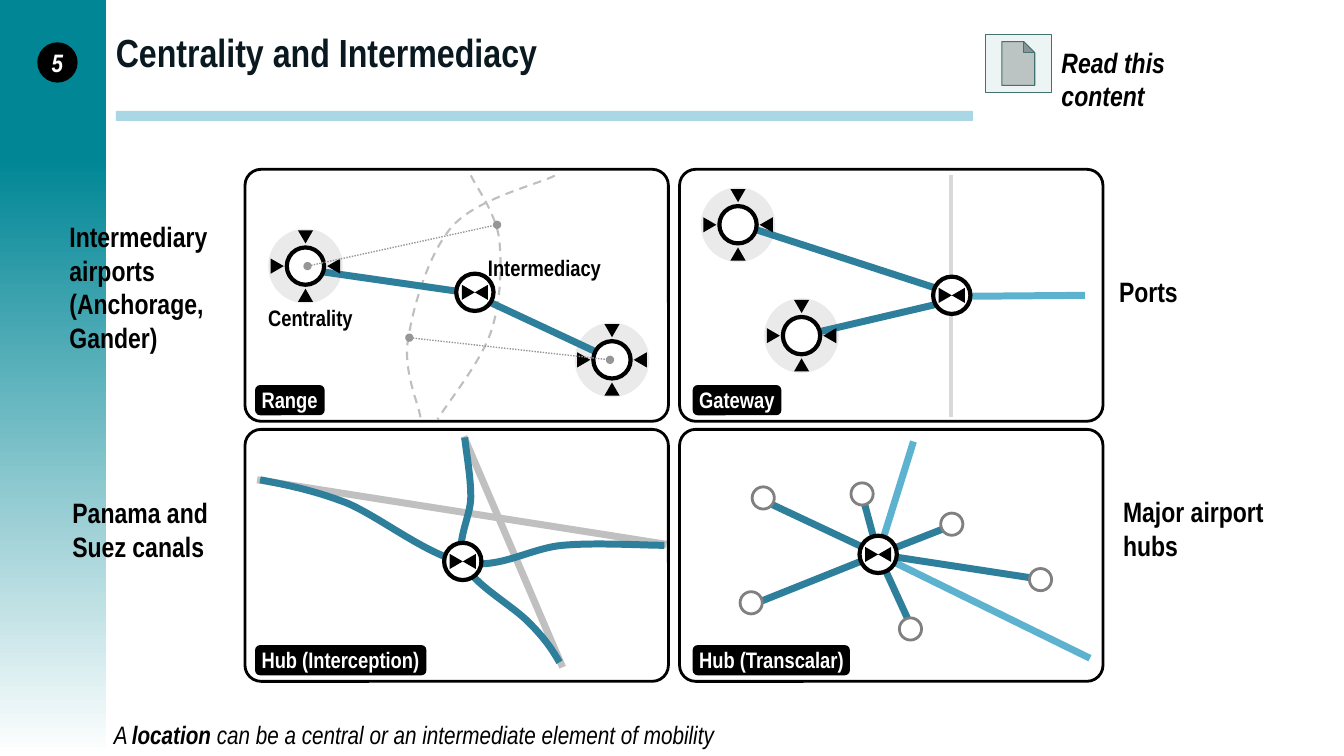
from lxml import etree
from pptx import Presentation
from pptx import util as u
from pptx.dml import color
from pptx.enum import dml, shapes, text
from pptx.oxml import ns

KIND = shapes.MSO_SHAPE
DASH = dml.MSO_LINE
FONT = "Arial Narrow"
BLACK, WHITE = "000000", "FFFFFF"
DEEP, SKY, PALE = "2D7F9B", "5DB3CF", "C0C0C0"
NONE = (0, 0, 0, 0)
WIDE = (0.1, 0.05, 0.1, 0.05)


def size(inch):
    return u.Cm(inch * 2.54)


def tint(code):
    return color.RGBColor.from_string(code)


def stroke(line, code, width, dash=None):
    line.color.rgb = tint(code)
    line.width = u.Pt(width)
    if dash:
        line.dash_style = dash


def shape(slide, kind, box, fill=None, edge=None, turn=0, round=None):
    item = slide.shapes.add_shape(kind, *map(size, box))
    item.shadow.inherit = False
    item.rotation = turn
    if round is not None:
        item.adjustments[0] = round
    if fill:
        item.fill.solid()
        item.fill.fore_color.rgb = tint(fill)
    else:
        item.fill.background()
    if edge:
        stroke(item.line, *edge)
    else:
        item.line.fill.background()
    return item


def write(item, runs, points, code=BLACK, pad=WIDE, wrap=False, middle=False, center=False):
    frame = item.text_frame
    frame.word_wrap = wrap
    frame.margin_left, frame.margin_top, frame.margin_right, frame.margin_bottom = map(size, pad)
    frame.vertical_anchor = text.MSO_ANCHOR.MIDDLE if middle else text.MSO_ANCHOR.TOP
    para = frame.paragraphs[0]
    para.alignment = text.PP_ALIGN.CENTER if center else text.PP_ALIGN.LEFT
    for words, bold, slant in runs:
        run = para.add_run()
        run.text = words
        font = run.font
        font.name, font.size = FONT, u.Pt(points)
        font.bold, font.italic = bold, slant
        font.color.rgb = tint(code)


def label(slide, box, words, points=20, slant=False, **style):
    item = slide.shapes.add_textbox(*map(size, box))
    write(item, [(words, True, slant)], points, **style)


def disc(slide, mid, wide, fill, edge=None):
    x, y = mid
    return shape(slide, KIND.OVAL, (x - wide / 2, y - wide / 2, wide, wide), fill, edge)


def ring(slide, mid):
    disc(slide, mid, 0.37, WHITE, (BLACK, 3))


def wedge(slide, x, y, turn):
    shape(slide, KIND.ISOSCELES_TRIANGLE, (x - 0.075, y - 0.065, 0.15, 0.13), BLACK, turn=turn, round=0.5)


def halo(slide, mid):
    disc(slide, mid, 0.74, "EAEAEA")


def center(slide, mid):
    ring(slide, mid)
    x, y = mid
    for dx, dy, turn in ((0, 0.29, 0), (0, -0.29, 180), (-0.28, 0, 90), (0.28, 0, 270)):
        wedge(slide, x + dx, y + dy, turn)


def hub(slide, mid):
    ring(slide, mid)
    x, y = mid
    wedge(slide, x - 0.065, y, 90)
    wedge(slide, x + 0.065, y, 270)


def link(slide, start, end, code=DEEP, width=5, dash=None, dots=False):
    item = slide.shapes.add_connector(shapes.MSO_CONNECTOR.STRAIGHT, *map(size, start + end))
    stroke(item.line, code, width, dash)
    if dots:
        for tip in ("a:headEnd", "a:tailEnd"):
            etree.SubElement(item.line._get_or_add_ln(), ns.qn(tip), type="oval")
    etree.SubElement(item._element.spPr, ns.qn("a:effectLst"))


def curve(slide, spots, code=DEEP, width=5, dash=None):
    pen = slide.shapes.build_freeform(*map(size, spots[0]))
    pen.add_line_segments([tuple(map(size, spot)) for spot in spots[1:]], close=False)
    item = pen.convert_to_shape()
    item.shadow.inherit = False
    item.fill.background()
    stroke(item.line, code, width, dash)
    track = item._element.find(".//" + ns.qn("a:path"))
    legs = track.findall(ns.qn("a:lnTo"))
    for first in range(0, len(legs), 3):
        bend = etree.SubElement(track, ns.qn("a:cubicBezTo"))
        for leg in legs[first:first + 3]:
            bend.append(leg[0])
            track.remove(leg)


def panel(slide, col, row, words, left, wide):
    top = 1.68 + 2.58 * row
    shape(slide, KIND.ROUNDED_RECTANGLE, (2.43 + 4.31 * col, top, 4.2, 2.5), edge=(BLACK, 2), round=0.064)
    tag = shape(slide, KIND.ROUNDED_RECTANGLE, (left, top + 2.14, wide, 0.3), BLACK)
    write(tag, [(words, True, False)], 16, WHITE, (0.05, 0, 0.05, 0))


def header(slide):
    shape(slide, KIND.RECTANGLE, (-0.02, -0.01, 1.07, 1.58), "008695")
    fade = shape(slide, KIND.RECTANGLE, (-0.02, 1.57, 1.07, 5.93))
    fade.fill.gradient()
    fade.fill.gradient_angle = 270
    for stop, code, place in zip(fade.fill.gradient_stops, ("008695", WHITE), (0, 1)):
        stop.color.rgb = tint(code)
        stop.position = place
    shape(slide, KIND.RECTANGLE, (1.15, 1.1, 8.5, 0.1), "AAD7E6")
    label(slide, (1.05, 0.01, 11.98, 1), "Centrality and Intermediacy", 28, code="09191F", wrap=True, middle=True)
    shape(slide, KIND.ACTION_BUTTON_DOCUMENT, (9.77, 0.34, 0.66, 0.58), "ECF4F4", ("427272", 0.75))
    label(slide, (10.43, 0.4, 1.86, 0.44), "Read this content", slant=True, wrap=True)
    badge = disc(slide, (0.57, 0.62), 0.4, BLACK)
    write(badge, [("5", True, True)], 18, WHITE, NONE, middle=True, center=True)


def reach(slide):
    west, east = (3.03, 2.64), (6.07, 3.57)
    halo(slide, west)
    halo(slide, east)
    curve(slide, [(4.67, 1.74), (4.72, 1.85), (4.91, 2.1), (4.95, 2.36), (4.98, 2.62), (4.97, 2.99),
                  (4.87, 3.29), (4.77, 3.59), (4.45, 3.98), (4.34, 4.16)], "BFBFBF", 1.5, DASH.DASH)
    curve(slide, [(4.17, 4.14), (4.15, 4), (3.99, 3.67), (4.05, 3.35), (4.1, 3.04), (4.25, 2.51),
                  (4.49, 2.24), (4.74, 1.97), (5.3, 1.84), (5.51, 1.74)], "BFBFBF", 1.5, DASH.DASH)
    link(slide, (5.91, 3.49), (4.82, 2.98))
    link(slide, (4.54, 2.89), (3.15, 2.69))
    hub(slide, (4.71, 2.9))
    center(slide, west)
    center(slide, east)
    for start, end in (((3.05, 2.64), (4.93, 2.23)), ((4.06, 3.35), (6.05, 3.57))):
        link(slide, start, end, "969696", 1, DASH.ROUND_DOT, True)
    label(slide, (2.66, 3.02, 0.85, 0.27), "Centrality", 16, pad=NONE)
    label(slide, (4.84, 2.52, 1.13, 0.27), "Intermediacy", 16, pad=NONE)


def gateway(slide):
    north, south = (7.32, 2.23), (7.95, 3.33)
    link(slide, (9.43, 1.74), (9.43, 4.14), "D9D9D9", 3)
    halo(slide, north)
    halo(slide, south)
    link(slide, (10.76, 2.93), (9.54, 2.94), SKY)
    link(slide, (9.37, 3), (7.96, 3.33))
    link(slide, (9.38, 2.89), (7.38, 2.24))
    center(slide, north)
    center(slide, south)
    hub(slide, (9.44, 2.93))


def canal(slide):
    link(slide, (4.6, 4.33), (5.58, 6.62), PALE)
    link(slide, (2.55, 4.76), (6.61, 5.4), PALE)
    curve(slide, [(2.58, 4.76), (2.84, 4.81), (3.1, 4.86), (3.44, 4.99), (3.77, 5.13), (4.24, 5.51), (4.6, 5.58),
                  (4.96, 5.65), (5.25, 5.44), (5.58, 5.41), (5.91, 5.38), (6.38, 5.41), (6.59, 5.41)])
    curve(slide, [(5.55, 6.57), (5.48, 6.45), (5.41, 6.34), (5.25, 6.18), (5.09, 6.01), (4.7, 5.8), (4.6, 5.59),
                  (4.51, 5.38), (4.67, 5.13), (4.67, 4.93), (4.67, 4.72), (4.62, 4.46), (4.61, 4.34)])
    hub(slide, (4.59, 5.57))


def airport(slide):
    core = (8.71, 5.5)
    for end in ((9.06, 4.38), (10.81, 6.53)):
        link(slide, core, end, SKY)
    spokes = (((7.54, 4.95), (7.57, 4.94)), ((7.46, 6), (7.45, 5.98)), ((9.45, 5.21), (9.44, 5.2)),
              ((9.04, 6.22), (9.03, 6.24)), ((8.54, 4.87), (8.55, 4.9)), ((10.34, 5.75), (10.32, 5.75)))
    for end, mid in spokes:
        link(slide, core, end)
    hub(slide, core)
    for end, mid in spokes:
        disc(slide, mid, 0.22, WHITE, ("808080", 2))


def main():
    deck = Presentation()
    deck.slide_width, deck.slide_height = size(13.33), size(7.5)
    slide = deck.slides.add_slide(deck.slide_layouts[6])
    header(slide)
    for draw in (reach, gateway, canal, airport):
        draw(slide)
    panel(slide, 0, 0, "Range", 2.53, 0.69)
    panel(slide, 1, 0, "Gateway", 6.87, 0.88)
    panel(slide, 0, 1, "Hub (Interception)", 2.53, 1.7)
    panel(slide, 1, 1, "Hub (Transcalar)", 6.87, 1.56)
    label(slide, (11, 2.67, 0.79, 0.44), "Ports")
    label(slide, (0.59, 2.13, 1.8, 1.45), "Intermediary airports (Anchorage, Gander)", wrap=True)
    label(slide, (0.62, 4.87, 1.8, 0.77), "Panama and Suez canals", wrap=True)
    label(slide, (11.04, 4.86, 1.8, 0.77), "Major airport hubs", wrap=True)
    note = slide.shapes.add_textbox(*map(size, (1.03, 7.09, 6.45, 0.4)))
    write(note, [("A ", False, True), ("location", True, True),
                 (" can be a central or an intermediate element of mobility", False, True)], 18)
    deck.save("out.pptx")


if __name__ == "__main__":
    main()
